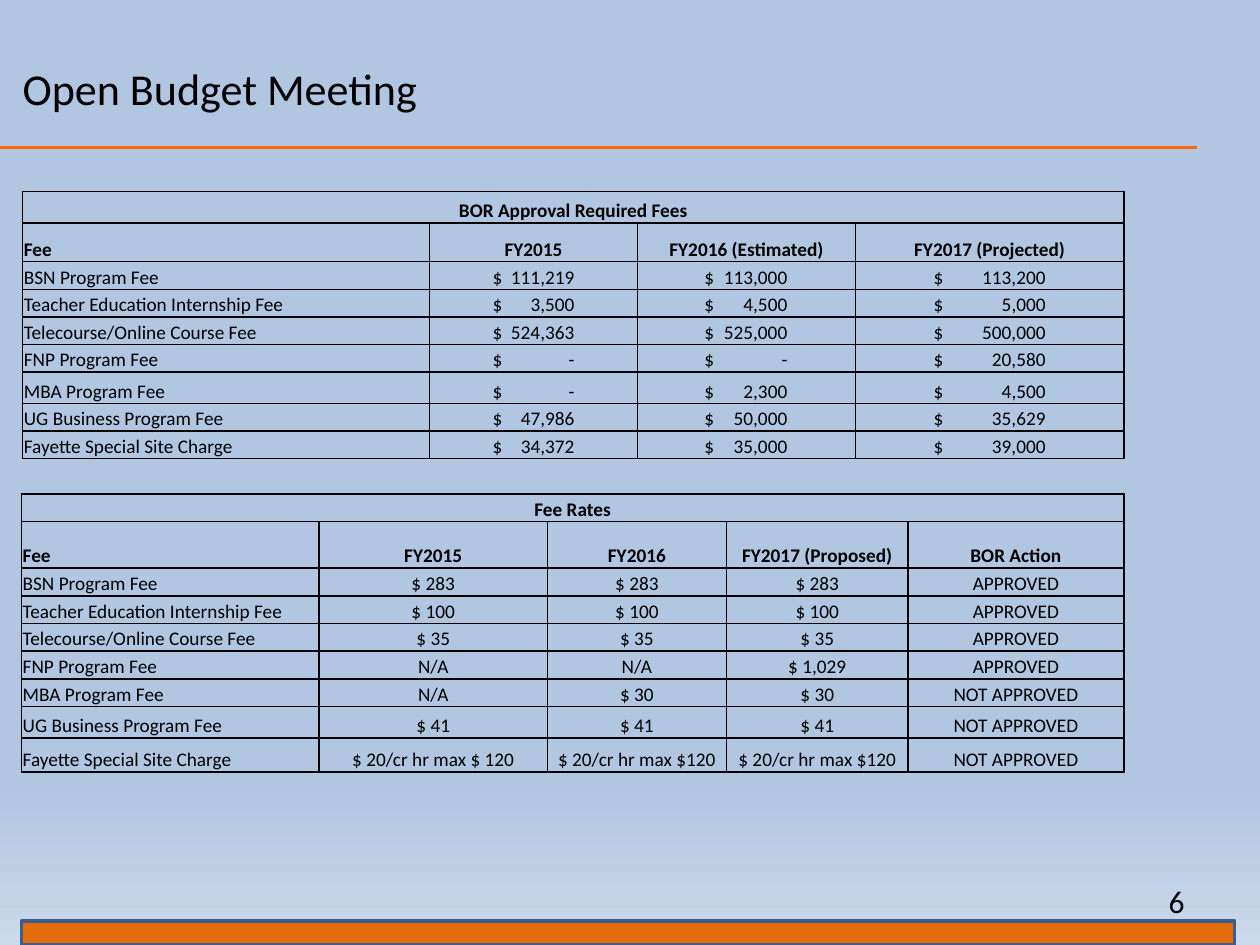
from lxml import etree
from pptx import Presentation
from pptx.dml.color import RGBColor
from pptx.enum.shapes import MSO_CONNECTOR, MSO_SHAPE
from pptx.enum.text import MSO_ANCHOR, PP_ALIGN
from pptx.oxml.ns import qn
from pptx.util import Inches, Pt

STRAIGHT, RECT = MSO_CONNECTOR.STRAIGHT, MSO_SHAPE.RECTANGLE
LEFT, CENTER, RIGHT = PP_ALIGN.LEFT, PP_ALIGN.CENTER, PP_ALIGN.RIGHT
MIDDLE, BOTTOM = MSO_ANCHOR.MIDDLE, MSO_ANCHOR.BOTTOM
FONT, BLACK = "Calibri", "000000"
WIDTH, HEIGHT = Inches(10), Inches(7.5)
COL, ROW = WIDTH / 20, HEIGHT / 15  # layout grid of 20 columns by 15 rows
INSET = Inches(0.01)

FEE_NAMES = [
    "BSN Program Fee", "Teacher Education Internship Fee",
    "Telecourse/Online Course Fee", "FNP Program Fee", "MBA Program Fee",
    "UG Business Program Fee", "Fayette Special Site Charge",
]
FEE_HEADER = ["Fee", "FY2015", "FY2016 (Estimated)", "FY2017 (Projected)"]
FEE_AMOUNTS = [
    ["111,219", "113,000", "113,200"],
    ["3,500", "4,500", "5,000"],
    ["524,363", "525,000", "500,000"],
    ["-", "-", "20,580"],
    ["-", "2,300", "4,500"],
    ["47,986", "50,000", "35,629"],
    ["34,372", "35,000", "39,000"],
]
# Indent of the dollar sign and width of the amount, in grid columns
AMOUNT_STOPS = [(1, 1.3), (1.06, 1.32), (1.24, 1.78)]
RATE_HEADER = ["Fee", "FY2015", "FY2016", "FY2017 (Proposed)", "BOR Action"]
RATES = [
    ["$ 283", "$ 283", "$ 283", "APPROVED"],
    ["$ 100", "$ 100", "$ 100", "APPROVED"],
    ["$ 35", "$ 35", "$ 35", "APPROVED"],
    ["N/A", "N/A", "$ 1,029", "APPROVED"],
    ["N/A", "$ 30", "$ 30", "NOT APPROVED"],
    ["$ 41", "$ 41", "$ 41", "NOT APPROVED"],
    ["$ 20/cr hr max $ 120", "$ 20/cr hr max $120", "$ 20/cr hr max $120",
     "NOT APPROVED"],
]


def rgb(color):
    return RGBColor.from_string(color)


def place(x, y, w, h):
    """Turn grid columns and rows into slide lengths."""
    return round(x * COL), round(y * ROW), round(w * COL), round(h * ROW)


def style(p, size, align, bold=False):
    p.alignment = align
    p.font.name, p.font.size, p.font.bold = FONT, Pt(size), bold
    p.font.color.rgb = rgb(BLACK)


def add_text(s, box, text, size, align, inset=0):
    tf = s.shapes.add_textbox(*place(*box)).text_frame
    tf.word_wrap, tf.vertical_anchor = True, MIDDLE
    tf.margin_left = tf.margin_right = inset
    tf.margin_top = tf.margin_bottom = 0
    tf.text = text
    style(tf.paragraphs[0], size, align)


def add_borders(cell):
    tc_pr = cell._tc.get_or_add_tcPr()
    for i, side in enumerate(("a:lnL", "a:lnR", "a:lnT", "a:lnB")):
        ln = etree.Element(qn(side), w=str(Pt(1)))
        fill = etree.SubElement(ln, qn("a:solidFill"))
        etree.SubElement(fill, qn("a:srgbClr"), val=BLACK)
        tc_pr.insert(i, ln)


def add_tab(p, position):
    tabs = etree.SubElement(p._p.get_or_add_pPr(), qn("a:tabLst"))
    etree.SubElement(tabs, qn("a:tab"), pos=str(round(position)), algn="r")


def add_fee_table(s, box, cols, rows, title, header, values, stops=None):
    """Title row, header row, then one row per fee; sizes are weights."""
    x, y, w, h = place(*box)
    table = s.shapes.add_table(len(rows), len(cols), x, y, w, h).table
    table.first_row = table.horz_banding = False
    for column, weight in zip(table.columns, cols):
        column.width = round(w * weight / sum(cols))
    for row, weight in zip(table.rows, rows):
        row.height = round(h * weight / sum(rows))
    table.cell(0, 0).merge(table.cell(0, len(cols) - 1))

    body = [[name, *line] for name, line in zip(FEE_NAMES, values)]
    for r, line in enumerate([[title], header, *body]):
        for c in range(len(cols)):
            cell = table.cell(r, c)
            cell.fill.background()
            add_borders(cell)
            if c >= len(line):
                continue
            cell.vertical_anchor = BOTTOM
            cell.margin_left = cell.margin_right = cell.margin_top = INSET
            cell.margin_bottom = 0
            p = cell.text_frame.paragraphs[0]
            p.line_spacing = 1.07
            align = LEFT if c == 0 and r > 0 else CENTER
            text = line[c]
            if stops and r > 1 and c > 0:
                indent, width = stops[c - 1]
                cell.margin_left = round(indent * COL)
                add_tab(p, width * COL)
                align, text = LEFT, f"$\t{text}"
            p.add_run().text = text
            style(p, 11, align, bold=r < 2)


def add_background(s):
    fill = s.background.fill
    fill.gradient()
    fill.gradient_angle = 270
    for stop, (position, color) in zip(
            fill.gradient_stops, [(0.83, "B0C6E1"), (1, "CAD9EB")]):
        stop.position, stop.color.rgb = position, rgb(color)


def add_heading(s, box):
    x, y, w, h = box
    # Rule from the slide edge along the bottom of the heading
    left, bottom, right, _ = place(x, y + h, x + w, 0)
    rule = s.shapes.add_connector(STRAIGHT, left, bottom, right, bottom)
    rule.line.color.rgb, rule.line.width = rgb("FF6600"), Pt(1.5)
    etree.SubElement(rule._element.spPr, qn("a:effectLst"))
    add_text(s, (x + 0.36, y + 0.84, 12, 1.12), "Open Budget Meeting", 25.2, LEFT)


def add_footer(s, box):
    x, y, w, h = box
    add_text(s, (14.34, y, 4.66, 0.8), "6", 18, RIGHT, Inches(0.1))
    bar = s.shapes.add_shape(RECT, *place(x, y + h - 0.38, w, 0.38))
    bar.shadow.inherit = False
    bar.fill.solid()
    bar.fill.fore_color.rgb = rgb("E46C0A")
    bar.line.color.rgb, bar.line.width = rgb("3A5F8C"), Pt(2)


def main():
    prs = Presentation()
    prs.slide_width, prs.slide_height = WIDTH, HEIGHT
    s = prs.slides.add_slide(prs.slide_layouts[6])
    add_background(s)
    add_heading(s, (0, 0, 19, 2.34))
    add_footer(s, (0.34, 13.9, 19.26, 1.1))
    # Fee rates and their approval
    add_fee_table(s, (0.34, 7.84, 17.5, 4.42), [2.36, 1.81, 1.42, 1.44, 1.71],
                  [0.22, 0.37] + [0.22] * 5 + [0.25, 0.27],
                  "Fee Rates", RATE_HEADER, RATES)
    # Fee revenue by year
    add_fee_table(s, (0.36, 3.04, 17.48, 4.24), [3.23, 1.65, 1.73, 2.13],
                  [0.25, 0.31] + [0.22] * 4 + [0.25, 0.22, 0.22],
                  "BOR Approval Required Fees", FEE_HEADER, FEE_AMOUNTS,
                  AMOUNT_STOPS)
    prs.save("out.pptx")


if __name__ == "__main__":
    main()
